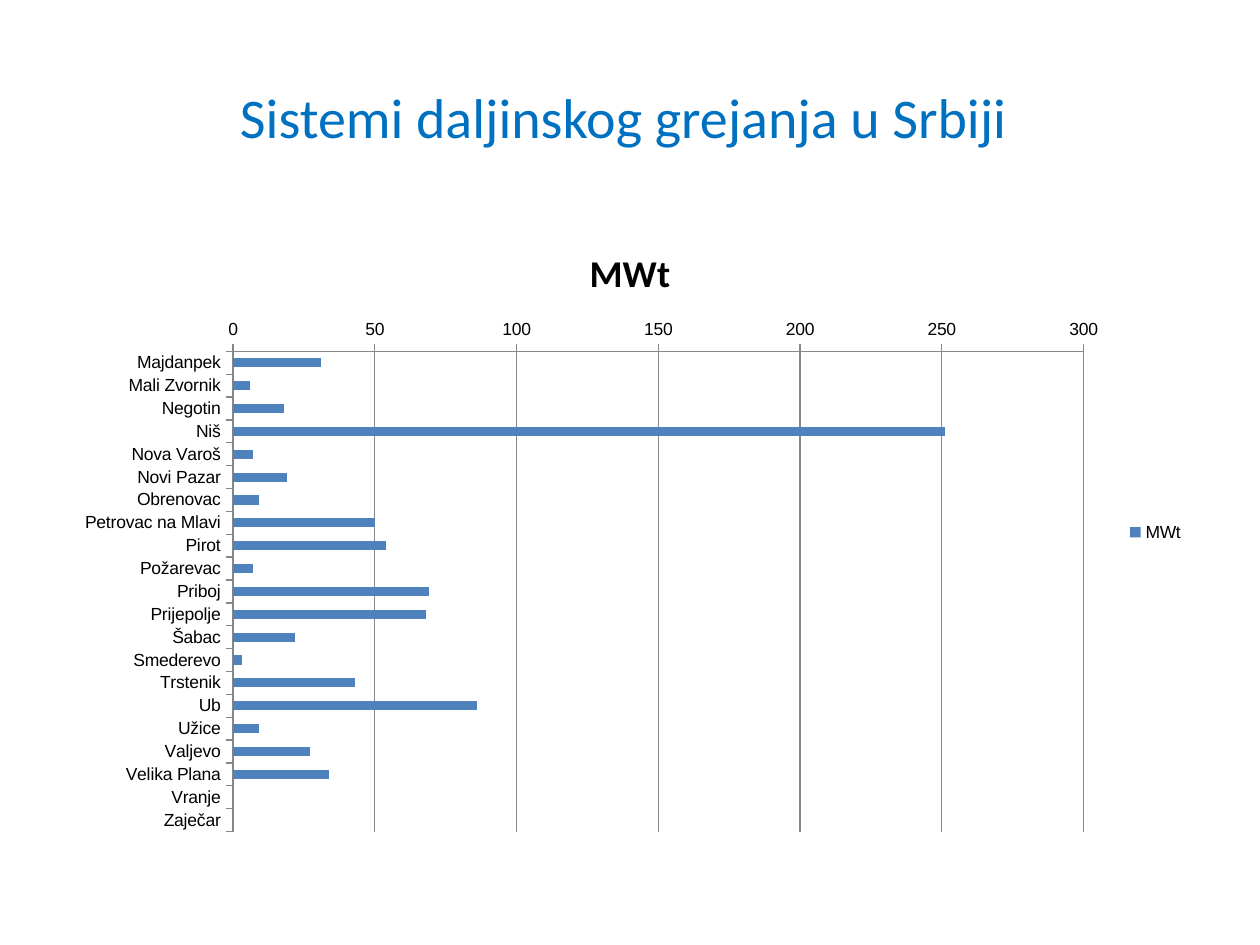
import dataclasses

import pptx
import pptx.chart.data
import pptx.dml.color
import pptx.enum.chart
import pptx.enum.text
import pptx.oxml
import pptx.oxml.ns
import pptx.util

Inches = pptx.util.Inches
Pt = pptx.util.Pt


@dataclasses.dataclass(frozen=True)
class Theme:
    heading_font: str = "Calibri"
    label_font: str = "Arial"
    heading_color: str = "0070C0"
    text_color: str = "000000"
    bar_color: str = "4F81BD"
    line_color: str = "878787"
    background: str = "FFFFFF"
    heading_size: float = 32
    chart_title_size: float = 21.6
    label_size: float = 10
    line_width: float = 0.75


THEME = Theme()

CAPACITIES = {
    "Majdanpek": 31,
    "Mali Zvornik": 6,
    "Negotin": 18,
    "Niš": 251,
    "Nova Varoš": 7,
    "Novi Pazar": 19,
    "Obrenovac": 9,
    "Petrovac na Mlavi": 50,
    "Pirot": 54,
    "Požarevac": 7,
    "Priboj": 69,
    "Prijepolje": 68,
    "Šabac": 22,
    "Smederevo": 3,
    "Trstenik": 43,
    "Ub": 86,
    "Užice": 9,
    "Valjevo": 27,
    "Velika Plana": 34,
    "Vranje": None,
    "Zaječar": None,
}


def rgb(color):
    return pptx.dml.color.RGBColor.from_string(color)


def style_font(font, name, size, color, bold=False):
    font.name = name
    font.size = Pt(size)
    font.bold = bold
    font.color.rgb = rgb(color)


def write_text(frame, text, **style):
    paragraph = frame.paragraphs[0]
    paragraph.alignment = pptx.enum.text.PP_ALIGN.CENTER
    run = paragraph.add_run()
    run.text = text
    style_font(run.font, **style)


def style_line(line):
    line.color.rgb = rgb(THEME.line_color)
    line.width = Pt(THEME.line_width)


def fix_plot_area(chart, x, y, w, h):
    plot_area = chart.element.find(".//" + pptx.oxml.ns.qn("c:plotArea"))
    for layout in plot_area.findall(pptx.oxml.ns.qn("c:layout")):
        plot_area.remove(layout)
    extents = "".join(
        f'<c:{tag} val="{share}"/>' for tag, share in zip("xywh", (x, y, w, h))
    )
    plot_area.insert(0, pptx.oxml.parse_xml(
        f'<c:layout {pptx.oxml.ns.nsdecls("c")}><c:manualLayout>'
        '<c:layoutTarget val="inner"/><c:xMode val="edge"/><c:yMode val="edge"/>'
        f"{extents}</c:manualLayout></c:layout>"
    ))


def place_heading(slide, left, top, width, height):
    heading = slide.shapes.title
    heading.left, heading.top = left, top
    heading.width, heading.height = width, height
    heading.text_frame.word_wrap = True
    heading.text_frame.vertical_anchor = pptx.enum.text.MSO_ANCHOR.MIDDLE
    write_text(heading.text_frame, "Sistemi daljinskog grejanja u Srbiji ",
               name=THEME.heading_font, size=THEME.heading_size,
               color=THEME.heading_color)


def place_capacity_chart(slide, left, top, width, height):
    capacity_data = pptx.chart.data.CategoryChartData()
    capacity_data.categories = list(CAPACITIES)
    capacity_data.add_series("MWt", list(CAPACITIES.values()))
    chart = slide.shapes.add_chart(
        pptx.enum.chart.XL_CHART_TYPE.BAR_CLUSTERED,
        left, top, width, height, capacity_data,
    ).chart
    style_font(chart.font, THEME.label_font, THEME.label_size, THEME.text_color)

    chart.has_title = True
    write_text(chart.chart_title.text_frame, "MWt", name=THEME.heading_font,
               size=THEME.chart_title_size, color=THEME.text_color, bold=True)

    chart.has_legend = True
    chart.legend.position = pptx.enum.chart.XL_LEGEND_POSITION.RIGHT
    chart.legend.include_in_layout = True

    towns, megawatts = chart.category_axis, chart.value_axis
    for axis in (towns, megawatts):
        axis.major_tick_mark = pptx.enum.chart.XL_TICK_MARK.OUTSIDE
        axis.minor_tick_mark = pptx.enum.chart.XL_TICK_MARK.NONE
        style_line(axis.format.line)
    towns.reverse_order = True
    megawatts.minimum_scale = 0
    megawatts.maximum_scale = 300
    megawatts.major_unit = 50
    megawatts.has_major_gridlines = True
    style_line(megawatts.major_gridlines.format.line)

    plot = chart.plots[0]
    plot.gap_width = 150
    plot.vary_by_categories = False
    bars = plot.series[0].format.fill
    bars.solid()
    bars.fore_color.rgb = rgb(THEME.bar_color)
    fix_plot_area(chart, 0.15, 0.21, 0.75, 0.77)


def main():
    deck = pptx.Presentation()
    deck.slide_width, deck.slide_height = Inches(10), Inches(7.5)
    slide = deck.slides.add_slide(deck.slide_layouts.get_by_name("Title Only"))
    slide.background.fill.solid()
    slide.background.fill.fore_color.rgb = rgb(THEME.background)
    margin, content_width = Inches(0.5), Inches(9)
    place_heading(slide, margin, Inches(0.3), content_width, Inches(1.25))
    place_capacity_chart(slide, margin, Inches(1.75), content_width, Inches(4.95))
    deck.save("out.pptx")


if __name__ == "__main__":
    main()
